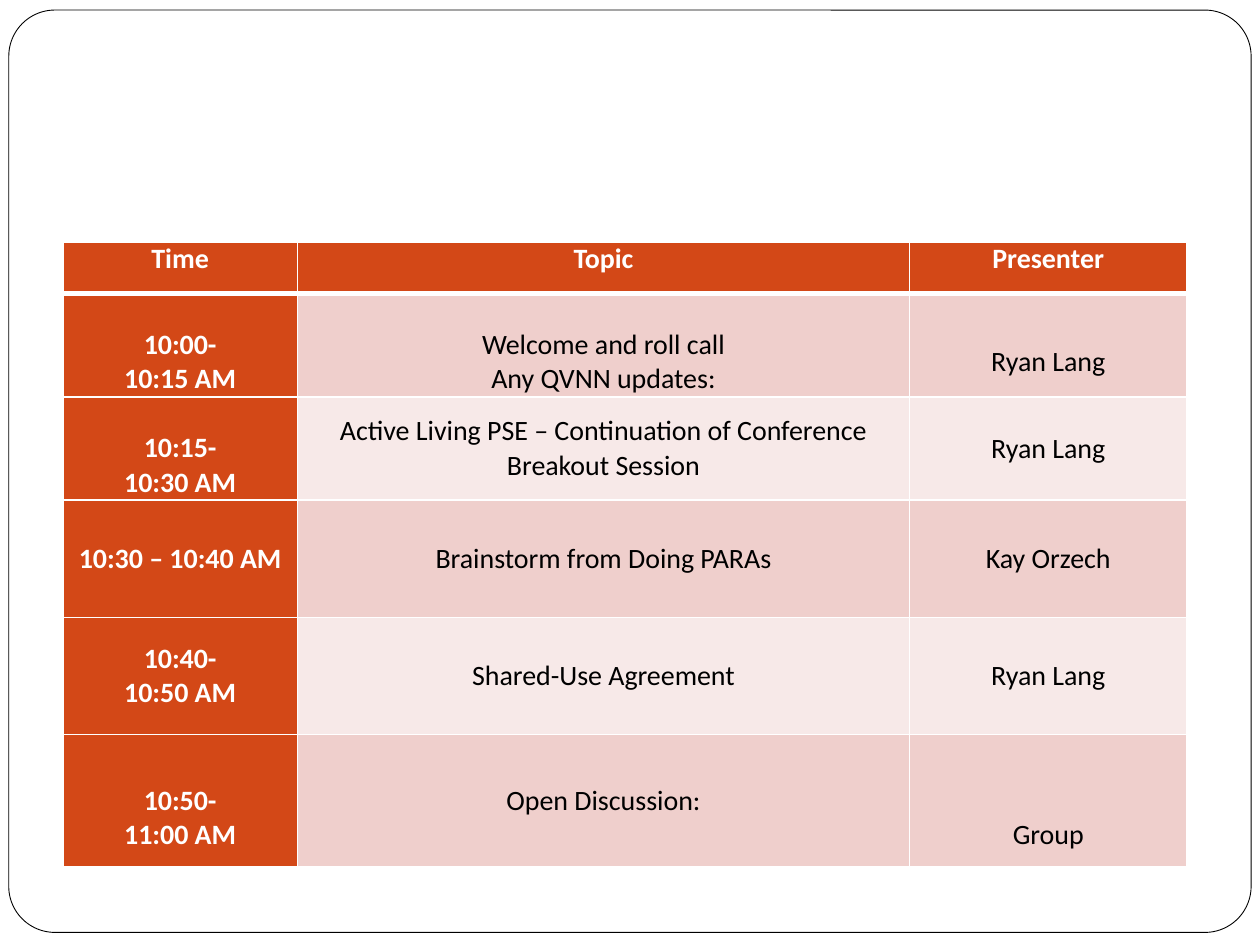
"""Build a one-slide meeting agenda with a framed background and a schedule table."""
import pptx
import pptx.dml.color
import pptx.enum.shapes
import pptx.enum.text
import pptx.oxml
import pptx.oxml.ns
import pptx.util
from pptx.util import Inches

ORANGE, PINK, PALE = "D34817", "EFCFCC", "F7E9E8"
LINE_HEIGHT = 0.27


def rgb(value):
    return pptx.dml.color.RGBColor.from_string(value)


def write(cell, text, color="000000", bold=False, anchor="MIDDLE", top=0):
    tf = cell.text_frame
    cell.margin_left = cell.margin_right = Inches(0.07)
    cell.margin_top, cell.margin_bottom = Inches(top), 0
    cell.vertical_anchor = getattr(pptx.enum.text.MSO_ANCHOR, anchor)
    tf.text = text
    for p in tf.paragraphs:
        p.alignment = pptx.enum.text.PP_ALIGN.CENTER
        for r in p.runs:
            r.font.name = "Calibri"
            r.font.size = pptx.util.Pt(16)
            r.font.bold = bold
            r.font.color.rgb = rgb(color)


prs = pptx.Presentation()
prs.slide_width, prs.slide_height = Inches(10), Inches(7.5)
s = prs.slides.add_slide(prs.slide_layouts[6])

sp = s.shapes.add_shape(
    pptx.enum.shapes.MSO_SHAPE.ROUNDED_RECTANGLE,
    Inches(0.07), Inches(0.08), Inches(9.86), Inches(7.32))
sp.adjustments[0] = 0.05
sp.shadow.inherit = False
sp.fill.solid()
sp.fill.fore_color.rgb = rgb("FFFFFF")
sp.line.color.rgb = rgb("000000")
sp.line.width = pptx.util.Pt(0.5)

# Each cell is its text and the number of lines it is pushed down.
agenda = [
    [("Time", 0), ("Topic", 0), ("Presenter", 0)],
    [("10:00-\n10:15 AM", 1), ("Welcome and roll call\nAny QVNN updates:", 1), ("Ryan Lang", 1)],
    [("10:15-\n10:30 AM", 1),
     ("Active Living PSE – Continuation of Conference Breakout Session", 0), ("Ryan Lang", 0)],
    [("10:30 – 10:40 AM", 0), ("Brainstorm from Doing PARAs", 0), ("Kay Orzech", 0)],
    [("10:40-\n10:50 AM", 0), ("Shared-Use Agreement", 0), ("Ryan Lang", 0)],
    [("10:50-\n11:00 AM", 1), ("Open Discussion:", 0), ("Group", 2)],
]
widths = [1.86, 4.86, 2.2]
heights = [0.41, 0.82, 0.82, 0.93, 0.93, 1.05]

tbl = s.shapes.add_table(
    len(heights), len(widths), Inches(0.5), Inches(1.92),
    Inches(sum(widths)), Inches(sum(heights))).table
for col, width in zip(tbl.columns, widths):
    col.width = Inches(width)
for row, height in zip(tbl.rows, heights):
    row.height = Inches(height)

for i, entries in enumerate(agenda):
    for j, (text, lines) in enumerate(entries):
        cell = tbl.cell(i, j)
        heading = i == 0 or j == 0
        write(cell, text, color="FFFFFF" if heading else "000000", bold=heading,
              anchor="TOP" if i == 0 else "MIDDLE", top=lines * LINE_HEIGHT)
        tcPr = cell._tc.get_or_add_tcPr()
        for side in ("lnL", "lnR", "lnT", "lnB"):
            thick = (i, side) in ((0, "lnB"), (1, "lnT"))
            tcPr.append(pptx.oxml.parse_xml(
                f'<a:{side} {pptx.oxml.ns.nsdecls("a")} w="{pptx.util.Pt(3 if thick else 1)}">'
                f'<a:solidFill><a:srgbClr val="FFFFFF"/></a:solidFill></a:{side}>'))
        cell.fill.solid()
        cell.fill.fore_color.rgb = rgb(ORANGE if heading else PINK if i % 2 else PALE)

prs.save("out.pptx")
